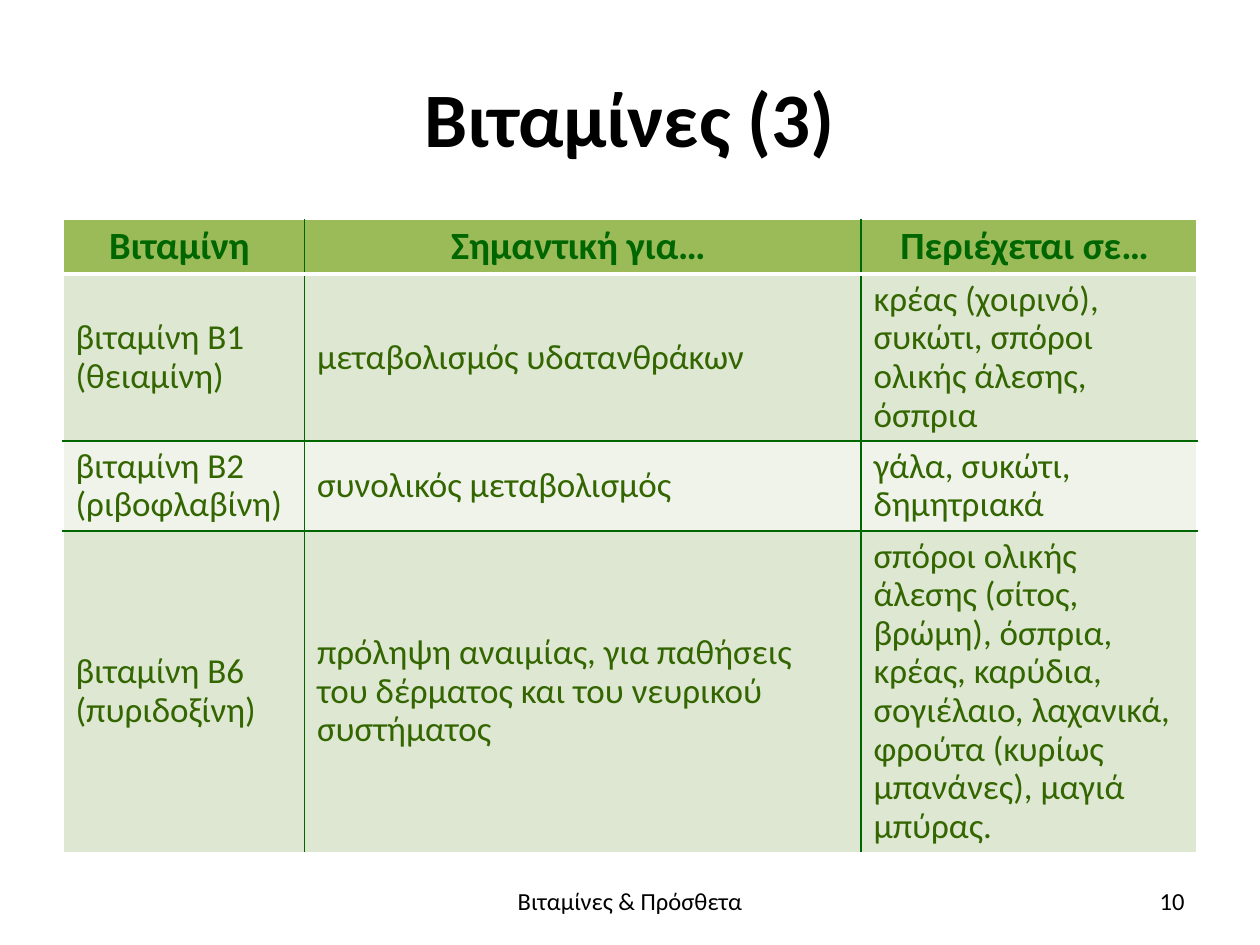
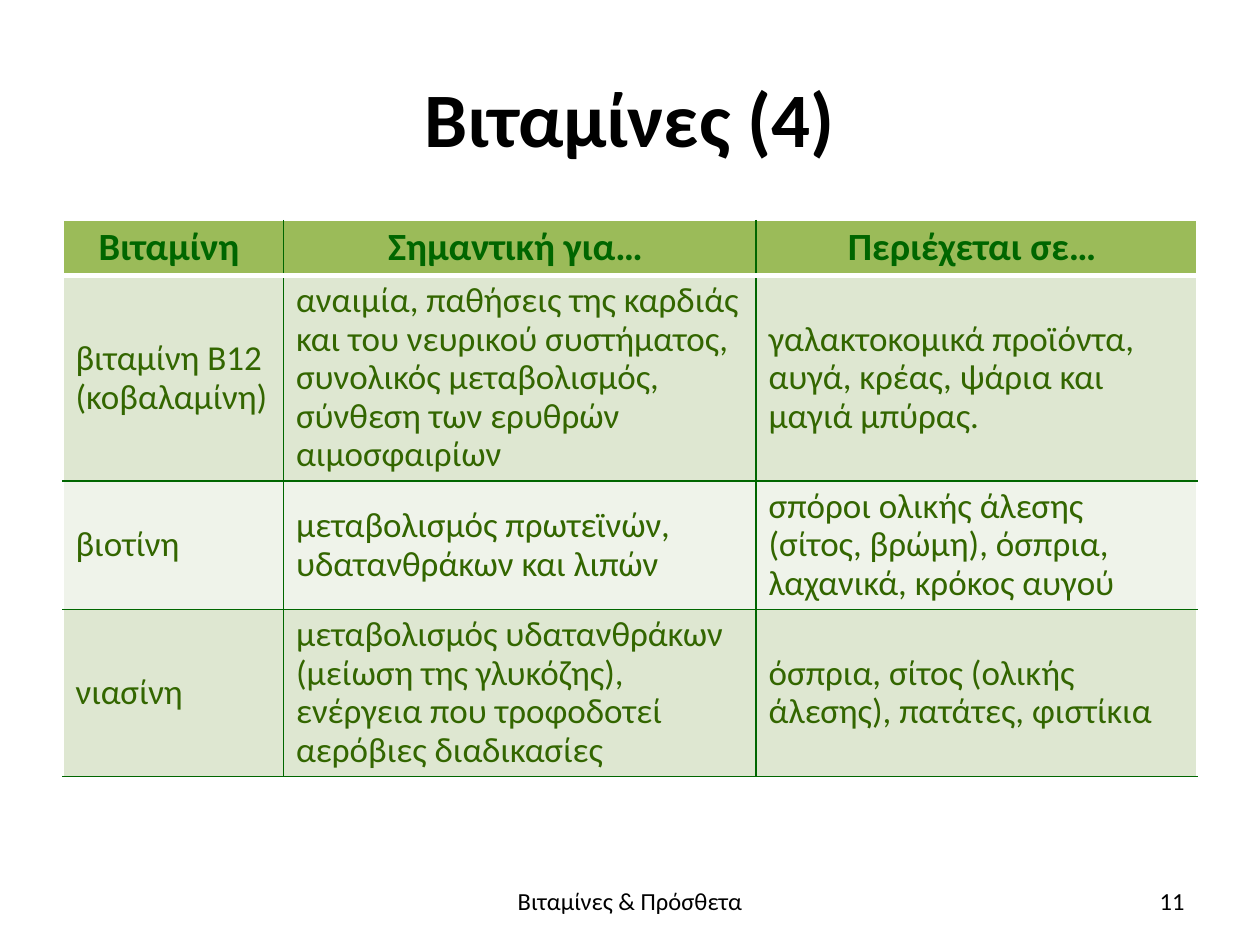
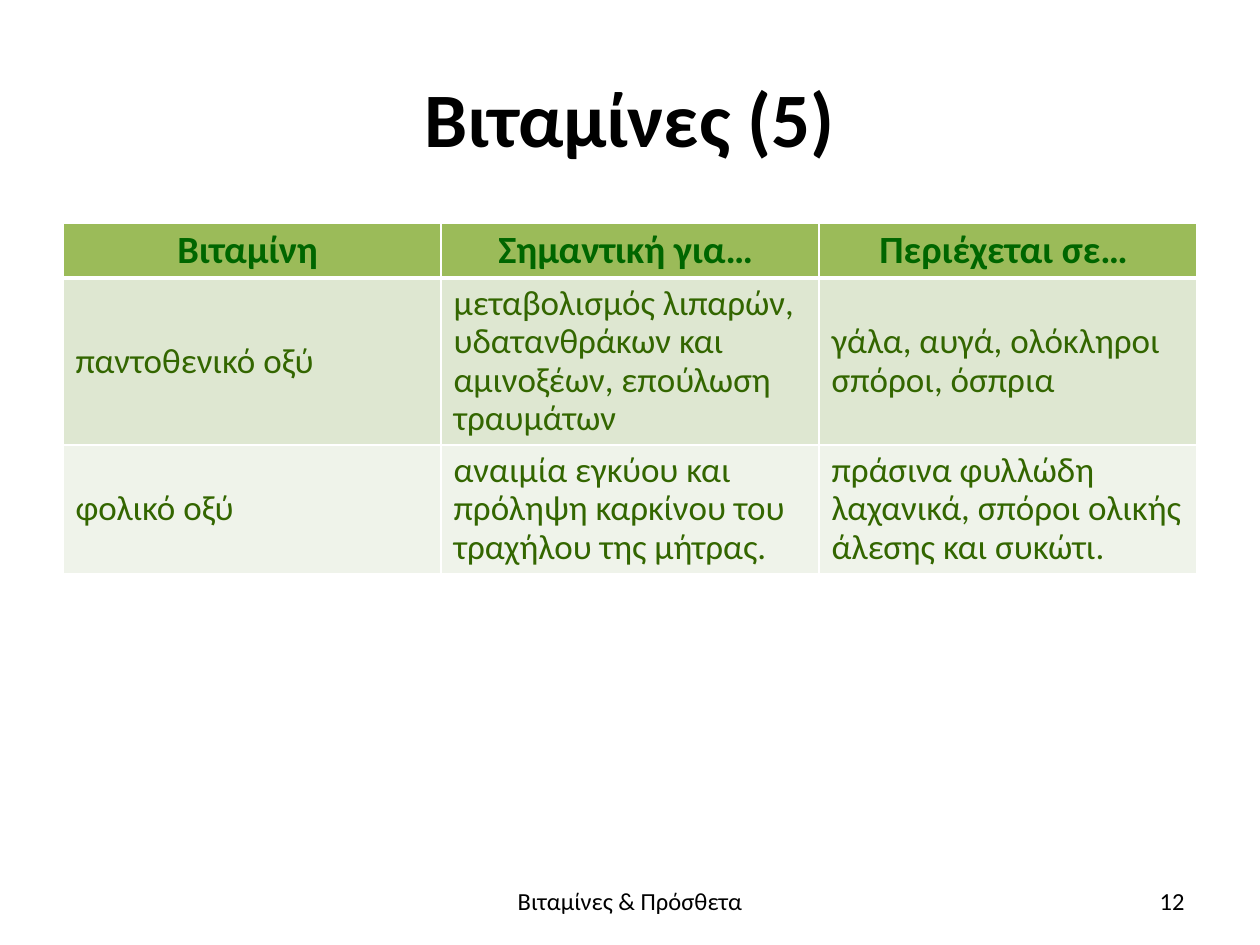
"""Build three slides of vitamin tables with a shared title, table and footer style."""
from dataclasses import dataclass

from lxml import etree
from pptx import Presentation
from pptx.dml.color import RGBColor
from pptx.enum.text import MSO_ANCHOR, PP_ALIGN
from pptx.oxml.ns import qn
from pptx.util import Pt

LEFT, MID, RIGHT = PP_ALIGN.LEFT, PP_ALIGN.CENTER, PP_ALIGN.RIGHT
CENTER = MSO_ANCHOR.MIDDLE


@dataclass(frozen=True)
class Theme:
    font: str = "Calibri"
    ink: str = "000000"
    white: str = "FFFFFF"
    green: str = "006600"
    leaf: str = "336600"
    head: str = "9BBB59"
    bands: tuple = ("DEE7D1", "EFF3EA")
    title: int = 44
    label: int = 22
    body: int = 20
    foot: int = 14


T = Theme()


def write(frame, text, size=T.body, color=T.ink, bold=False, align=LEFT, space=None):
    frame.text = text
    frame.word_wrap = True
    for para in frame.paragraphs:
        para.alignment = align
        para.line_spacing = space
        for run in para.runs:
            font = run.font
            font.name, font.size, font.bold = T.font, Pt(size), bold
            font.color.rgb = RGBColor.from_string(color)


def edge(cell, side, color, width):
    line = etree.SubElement(cell._tc.get_or_add_tcPr(), qn(f"a:ln{side}"), w=str(Pt(width)))
    fill = etree.SubElement(line, qn("a:solidFill"))
    etree.SubElement(fill, qn("a:srgbClr"), val=color)


HEADS = ("Βιταμίνη ", "Σημαντική για… ", "Περιέχεται σε… ")
HEAD_HIGH, LINE_HIGH, PAD = 30.5, 22, 7.2

PAGES = [
    dict(
        title="Βιταμίνες (3)", top=125.3, wide=(138, 318, 192), inner=T.green, base=T.white,
        rows=[
            (4, "βιταμίνη Β1 \v(θειαμίνη)", "μεταβολισμός υδατανθράκων",
             "κρέας (χοιρινό), συκώτι, σπόροι ολικής άλεσης, όσπρια"),
            (2, "βιταμίνη Β2\n(ριβοφλαβίνη)", "συνολικός μεταβολισμός",
             "γάλα, συκώτι, δημητριακά"),
            (8, "βιταμίνη Β6\v(πυριδοξίνη)",
             "πρόληψη αναιμίας, για παθήσεις του δέρματος και του νευρικού συστήματος",
             "σπόροι ολικής άλεσης (σίτος, βρώμη), όσπρια, κρέας, καρύδια, σογιέλαιο, "
             "λαχανικά, φρούτα (κυρίως μπανάνες), μαγιά μπύρας."),
        ],
    ),
    dict(
        title="Βιταμίνες (4)", top=126, wide=(126, 270, 252), inner=T.green, base=T.green,
        rows=[
            (5, "βιταμίνη Β12 (κοβαλαμίνη)",
             "αναιμία, παθήσεις της καρδιάς και του νευρικού συστήματος, "
             "συνολικός μεταβολισμός, σύνθεση των ερυθρών αιμοσφαιρίων",
             "γαλακτοκομικά προϊόντα, αυγά, κρέας, ψάρια και μαγιά μπύρας."),
            (3, "βιοτίνη", "μεταβολισμός πρωτεϊνών, υδατανθράκων και λιπών",
             "σπόροι ολικής άλεσης (σίτος, βρώμη), όσπρια, λαχανικά, κρόκος αυγού"),
            (4, "νιασίνη",
             "μεταβολισμός υδατανθράκων (μείωση της γλυκόζης), "
             "ενέργεια που τροφοδοτεί αερόβιες διαδικασίες",
             "όσπρια, σίτος (ολικής άλεσης), πατάτες, φιστίκια"),
        ],
    ),
    dict(
        title="Βιταμίνες (5)", top=127.5, wide=(216, 216, 216), inner=T.white, base=T.white,
        rows=[
            (4, "παντοθενικό οξύ",
             "μεταβολισμός λιπαρών, υδατανθράκων και αμινοξέων, επούλωση τραυμάτων",
             "γάλα, αυγά, ολόκληροι σπόροι, όσπρια"),
            (3, "φολικό οξύ", "αναιμία εγκύου και πρόληψη καρκίνου του τραχήλου της μήτρας.",
             "πράσινα φυλλώδη λαχανικά, σπόροι ολικής άλεσης και συκώτι."),
        ],
    ),
]

deck = Presentation()
deck.slide_width, deck.slide_height = Pt(720), Pt(540)

for num, page in enumerate(PAGES, 10):
    slide = deck.slides.add_slide(deck.slide_layouts[5])
    title = slide.shapes.title
    title.left, title.top, title.width, title.height = Pt(36), Pt(21.6), Pt(648), Pt(90)
    title.text_frame.vertical_anchor = CENTER
    write(title.text_frame, page["title"], size=T.title, bold=True, align=MID)

    highs = [HEAD_HIGH] + [row[0] * LINE_HIGH + PAD for row in page["rows"]]
    texts = [HEADS] + [row[1:] for row in page["rows"]]
    last = len(texts) - 1
    table = slide.shapes.add_table(
        len(texts), len(HEADS), Pt(36), Pt(page["top"]), Pt(648), Pt(sum(highs))).table
    for col, wide in zip(table.columns, page["wide"]):
        col.width = Pt(wide)
    for row, high in zip(table.rows, highs):
        row.height = Pt(high)

    inner = page["inner"]
    rules = [(T.white, 1), (T.white, 3)] + [(inner, 1)] * (last - 1) + [(page["base"], 1)]
    posts = [T.white, inner, inner, T.white]
    for r, texts_row in enumerate(texts):
        for c, text in enumerate(texts_row):
            cell = table.cell(r, c)
            cell.vertical_anchor = CENTER
            edge(cell, "L", posts[c], 1)
            edge(cell, "R", posts[c + 1], 1)
            edge(cell, "T", *rules[r])
            edge(cell, "B", *rules[r + 1])
            cell.fill.solid()
            cell.fill.fore_color.rgb = RGBColor.from_string(T.bands[(r - 1) % 2] if r else T.head)
            if r:
                write(cell.text_frame, text, color=T.leaf, space=0.9)
            else:
                write(cell.text_frame, text, size=T.label, color=T.green, bold=True,
                      align=MID, space=0.9)

    for left, wide, text, align in (
        (246, 228, "Βιταμίνες & Πρόσθετα", MID),
        (516, 168, str(num), RIGHT),
    ):
        frame = slide.shapes.add_textbox(Pt(left), Pt(500.5), Pt(wide), Pt(28.75)).text_frame
        frame.vertical_anchor = CENTER
        write(frame, text, size=T.foot, align=align)

deck.save("out.pptx")
